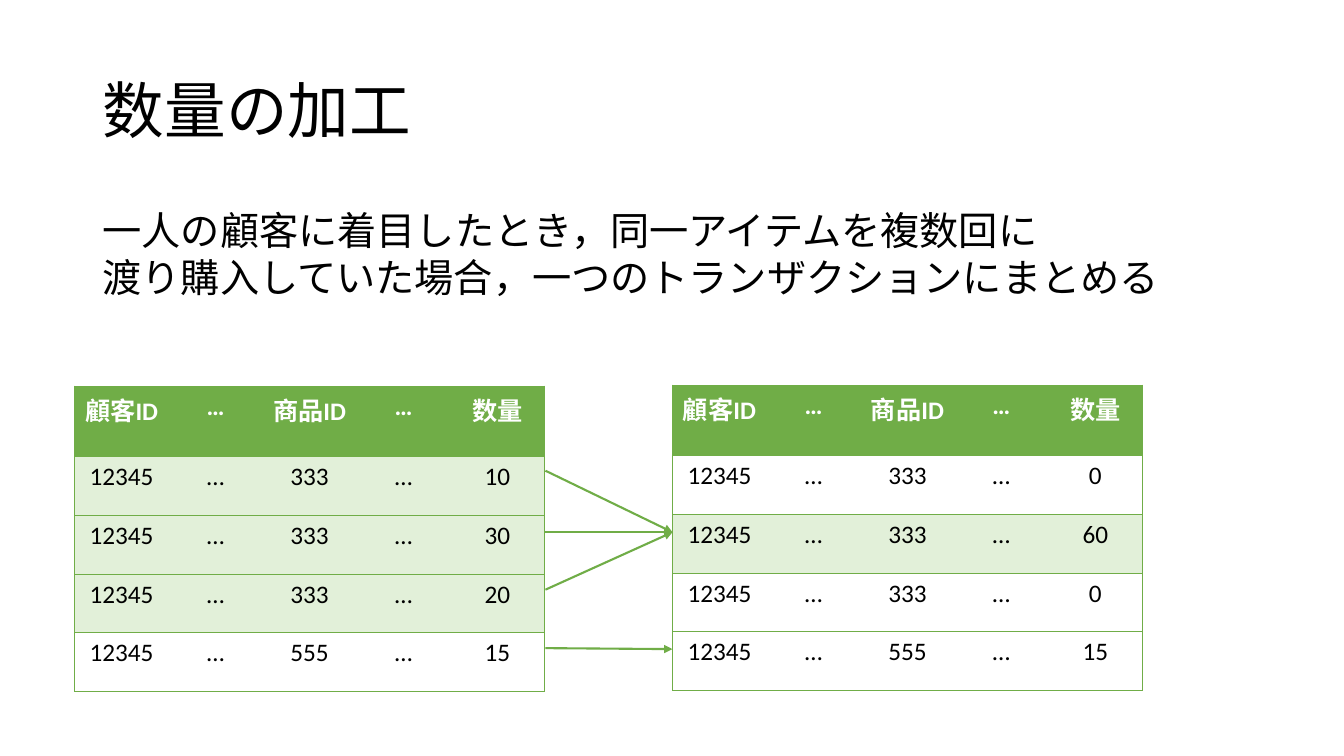
"""Build the slide on merging quantities, with two tables and linking arrows."""
from dataclasses import dataclass

from lxml.etree import SubElement
from pptx import Presentation
from pptx.dml.color import RGBColor
from pptx.enum.shapes import MSO_CONNECTOR
from pptx.enum.text import MSO_ANCHOR, PP_ALIGN
from pptx.oxml.ns import qn
from pptx.util import Pt


@dataclass(frozen=True)
class Theme:
    font: str = "Calibri"
    green: str = "70AD47"
    pale: str = "E2F0D9"
    white: str = "FFFFFF"
    black: str = "000000"
    title: int = 44
    body: int = 28
    cell: int = 18
    edge: float = 0.5
    arrow: float = 1.5


theme = Theme()
PX = 9144


def write(para, text, size, color, bold=False):
    run = para.add_run()
    run.text = text
    run.font.name = theme.font
    run.font.size = Pt(size)
    run.font.bold = bold
    run.font.color.rgb = RGBColor.from_string(color)


def border(cell, side, shown):
    line = SubElement(cell._tc.get_or_add_tcPr(), qn("a:ln" + side))
    if shown:
        line.set("w", str(Pt(theme.edge)))
        fill = SubElement(line, qn("a:solidFill"))
        SubElement(fill, qn("a:srgbClr"), val=theme.green)
    else:
        SubElement(line, qn("a:noFill"))


deck = Presentation()
deck.slide_width, deck.slide_height = 1333 * PX, 750 * PX
slide = deck.slides.add_slide(deck.slide_layouts[5])

title = slide.shapes.title
title.left, title.top, title.width, title.height = [n * PX for n in (92, 40, 1150, 145)]
title.text_frame.vertical_anchor = MSO_ANCHOR.MIDDLE
head = title.text_frame.paragraphs[0]
head.alignment = PP_ALIGN.LEFT
head.line_spacing = 0.9
write(head, "数量の加工", theme.title, theme.black)

body = slide.shapes.add_textbox(*[n * PX for n in (92, 200, 1150, 110)]).text_frame
body.word_wrap = True
lines = (
    "一人の顧客に着目したとき，同一アイテムを複数回に",
    "渡り購入していた場合，一つのトランザクションにまとめる",
)
for i, text in enumerate(lines):
    para = body.add_paragraph() if i else body.paragraphs[0]
    write(para, text, theme.body, theme.black)

labels = ("顧客ID", "…", "商品ID", "…", "数量")
items = ("333", "333", "333", "555")
tables = (
    (74, 383, ("10", "30", "20", "15"), (1, 2, 3)),
    (667, 382, ("0", "60", "0", "15"), (2,)),
)
for left, top, counts, marked in tables:
    rows = [labels] + [("12345", "…", item, "…", count) for item, count in zip(items, counts)]
    last = len(labels) - 1
    frame = slide.shapes.add_table(
        len(rows), len(labels), left * PX, top * PX, 466 * PX, 291 * PX
    )
    table = frame.table
    table.horz_banding = False
    for r, row in enumerate(rows):
        for c, text in enumerate(row):
            cell = table.cell(r, c)
            para = cell.text_frame.paragraphs[0]
            para.alignment = PP_ALIGN.CENTER
            write(para, text, theme.cell, theme.black if r else theme.white, r == 0)
            for side, shown in (("L", c == 0), ("R", c == last), ("T", True), ("B", True)):
                border(cell, side, shown)
            if r == 0 or r in marked:
                cell.fill.solid()
                cell.fill.fore_color.rgb = RGBColor.from_string(theme.pale if r else theme.green)
            else:
                cell.fill.background()

for start, end in ((467, 528), (528, 528), (585, 528), (643, 644)):
    arrow = slide.shapes.add_connector(
        MSO_CONNECTOR.STRAIGHT, 541 * PX, start * PX, 667 * PX, end * PX
    )
    arrow.line.color.rgb = RGBColor.from_string(theme.green)
    arrow.line.width = Pt(theme.arrow)
    SubElement(arrow.line._get_or_add_ln(), qn("a:tailEnd"), type="triangle")
    SubElement(arrow._element.spPr, qn("a:effectLst"))

deck.save("out.pptx")
